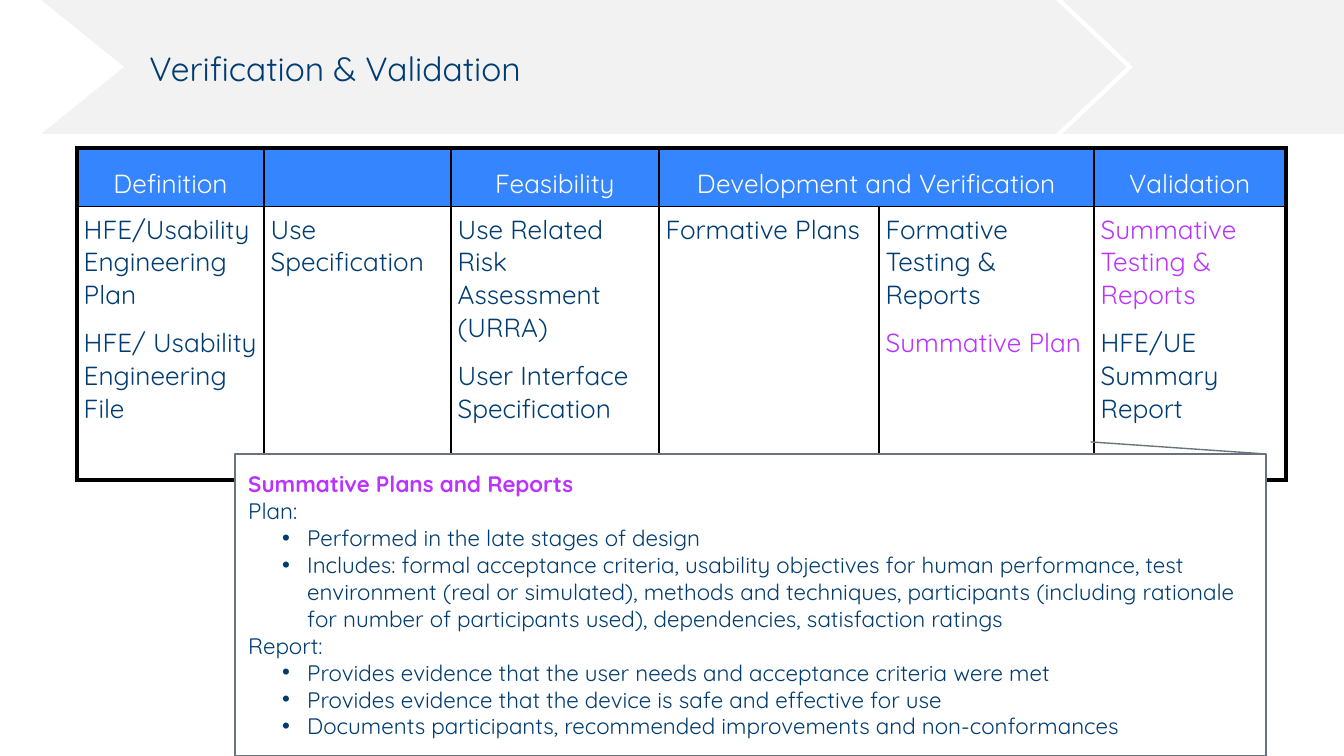
from dataclasses import dataclass

from lxml import etree
from pptx import Presentation
from pptx import util as u
from pptx.dml.color import RGBColor
from pptx.enum import shapes, text
from pptx.oxml import ns

PX = 914400 / 134.4
FONT = "Quicksand"
COLORS = {
    "navy": "003C71",
    "violet": "BB33FF",
    "blue": "3485FE",
    "band": "F2F2F2",
    "white": "FFFFFF",
    "black": "000000",
    "outline": "6A737B",
}


@dataclass
class Line:
    text: str
    color: str = "navy"
    bold: bool = False
    bullet: bool = False


@dataclass
class Column:
    width: int
    heading: str
    items: list[Line]


@dataclass
class Panel:
    kind: shapes.MSO_SHAPE
    left: int
    top: int
    width: int
    height: int
    fill: str
    adjustments: tuple[float, ...] = ()


BACKDROP = [
    Panel(shapes.MSO_SHAPE.RECTANGLE, 0, 0, 1344, 134, "band"),
    Panel(shapes.MSO_SHAPE.CHEVRON, 1056, 0, 77, 134, "white", (0.92,)),
    Panel(shapes.MSO_SHAPE.PENTAGON, 0, 0, 124, 134, "white", (0.67,)),
]
COLUMNS = [
    Column(187, "Definition", [
        Line("HFE/Usability Engineering Plan"),
        Line("HFE/ Usability Engineering File"),
    ]),
    Column(187, "", [Line("Use Specification")]),
    Column(208, "Feasibility", [
        Line("Use Related Risk Assessment (URRA)"),
        Line("User Interface Specification"),
    ]),
    Column(220, "Development and Verification", [Line("Formative Plans")]),
    Column(215, "", [
        Line("Formative Testing & Reports"),
        Line("Summative Plan", "violet"),
    ]),
    Column(192, "Validation", [
        Line("Summative Testing & Reports", "violet"),
        Line("HFE/UE Summary Report"),
    ]),
]
ROW_HEIGHTS = [58, 274]
CALLOUT = Panel(shapes.MSO_SHAPE.LINE_CALLOUT_1, 235, 454, 1031, 302, "white",
                (0, 1, -0.04, 0.83))
CALLOUT_LINES = [
    Line("Summative Plans and Reports", "violet", bold=True),
    Line("Plan:"),
    Line("Performed in the late stages of design", bullet=True),
    Line("Includes: formal acceptance criteria, usability objectives for human "
         "performance, test environment (real or simulated), methods and techniques, "
         "participants (including rationale for number of participants used), "
         "dependencies, satisfaction ratings", bullet=True),
    Line("Report:"),
    Line("Provides evidence that the user needs and acceptance criteria were met",
         bullet=True),
    Line("Provides evidence that the device is safe and effective for use", bullet=True),
    Line("Documents participants, recommended improvements and non-conformances",
         bullet=True),
]


def px(length: int) -> u.Emu:
    return u.Emu(round(length * PX))


def rgb(color: str) -> RGBColor:
    return RGBColor.from_string(COLORS[color])


def add_bullet(para) -> None:
    properties = para._p.get_or_add_pPr()
    properties.set("lvl", "1")
    properties.set("marL", str(px(59)))
    properties.set("indent", str(px(-25)))
    bullet_color = etree.SubElement(properties, ns.qn("a:buClr"))
    etree.SubElement(bullet_color, ns.qn("a:srgbClr"), val=COLORS["navy"])
    etree.SubElement(properties, ns.qn("a:buFont"), typeface="Arial")
    etree.SubElement(properties, ns.qn("a:buChar"), char="•")


def write(frame, words: str, *, size: int, color: str = "navy", bold: bool = False,
          bullet: bool = False, align=text.PP_ALIGN.LEFT, leading=None,
          after=u.Pt(0), first: bool = True) -> None:
    para = frame.paragraphs[0] if first else frame.add_paragraph()
    if bullet:
        add_bullet(para)
    para.alignment = align
    para.line_spacing = leading
    para.space_after = after
    span = para.add_run()
    span.text = words
    span.font.name = FONT
    span.font.size = u.Pt(size)
    span.font.bold = bold
    span.font.color.rgb = rgb(color)


def write_lines(frame, lines: list[Line], *, size: int, after=u.Pt(0)) -> None:
    for index, line in enumerate(lines):
        write(frame, line.text, size=size, color=line.color, bold=line.bold,
              bullet=line.bullet, after=after, first=index == 0)


def draw_panel(page, panel: Panel):
    box = page.shapes.add_shape(panel.kind, px(panel.left), px(panel.top),
                                px(panel.width), px(panel.height))
    for index, value in enumerate(panel.adjustments):
        box.adjustments[index] = value
    box.shadow.inherit = False
    box.fill.solid()
    box.fill.fore_color.rgb = rgb(panel.fill)
    box.line.fill.background()
    return box


def draw_title(page, words: str) -> None:
    title = page.shapes.title
    title.left, title.top, title.width, title.height = map(px, (136, 34, 1140, 74))
    title.text_frame.vertical_anchor = text.MSO_ANCHOR.MIDDLE
    write(title.text_frame, words, size=18, leading=0.9)
    page.shapes.element.append(title.element)


def format_cell(cell, fill: str, outer_sides: set[str]) -> None:
    cell.margin_left = cell.margin_right = u.Inches(0.05)
    cell.margin_top = cell.margin_bottom = u.Inches(0.05)
    properties = cell._tc.get_or_add_tcPr()
    for side in "LRTB":
        weight = u.Pt(2.25 if side in outer_sides else 1)
        border = etree.SubElement(properties, ns.qn(f"a:ln{side}"), w=str(weight))
        solid = etree.SubElement(border, ns.qn("a:solidFill"))
        etree.SubElement(solid, ns.qn("a:srgbClr"), val=COLORS["black"])
    cell.fill.solid()
    cell.fill.fore_color.rgb = rgb(fill)


def draw_table(page, columns: list[Column]) -> None:
    width = sum(column.width for column in columns)
    table = page.shapes.add_table(2, len(columns), px(77), px(148), px(width),
                                  px(sum(ROW_HEIGHTS))).table
    table.first_row = table.horz_banding = False
    for row, height in zip(table.rows, ROW_HEIGHTS):
        row.height = px(height)
    for index, column in enumerate(columns):
        table.columns[index].width = px(column.width)
        edges = {"L"} if index == 0 else {"R"} if index == len(columns) - 1 else set()
        header, body = table.cell(0, index), table.cell(1, index)
        format_cell(header, "blue", edges | {"T"})
        format_cell(body, "white", edges | {"B"})
        if column.heading:
            write(header.text_frame, column.heading, size=14, color="white",
                  align=text.PP_ALIGN.CENTER, leading=u.Pt(24))
        write_lines(body.text_frame, column.items, size=14, after=u.Pt(8.4))
    table.cell(0, 3).merge(table.cell(0, 4))


def draw_callout(page) -> None:
    box = draw_panel(page, CALLOUT)
    box.line.color.rgb = rgb("outline")
    box.line.width = u.Pt(0.75)
    box.text_frame.word_wrap = True
    box.text_frame.vertical_anchor = text.MSO_ANCHOR.MIDDLE
    write_lines(box.text_frame, CALLOUT_LINES, size=12)


def main() -> None:
    deck = Presentation()
    deck.slide_width, deck.slide_height = px(1344), px(756)
    page = deck.slides.add_slide(deck.slide_layouts[5])
    for panel in BACKDROP:
        draw_panel(page, panel)
    draw_title(page, "Verification & Validation")
    draw_table(page, COLUMNS)
    draw_callout(page)
    deck.save("out.pptx")


if __name__ == "__main__":
    main()
